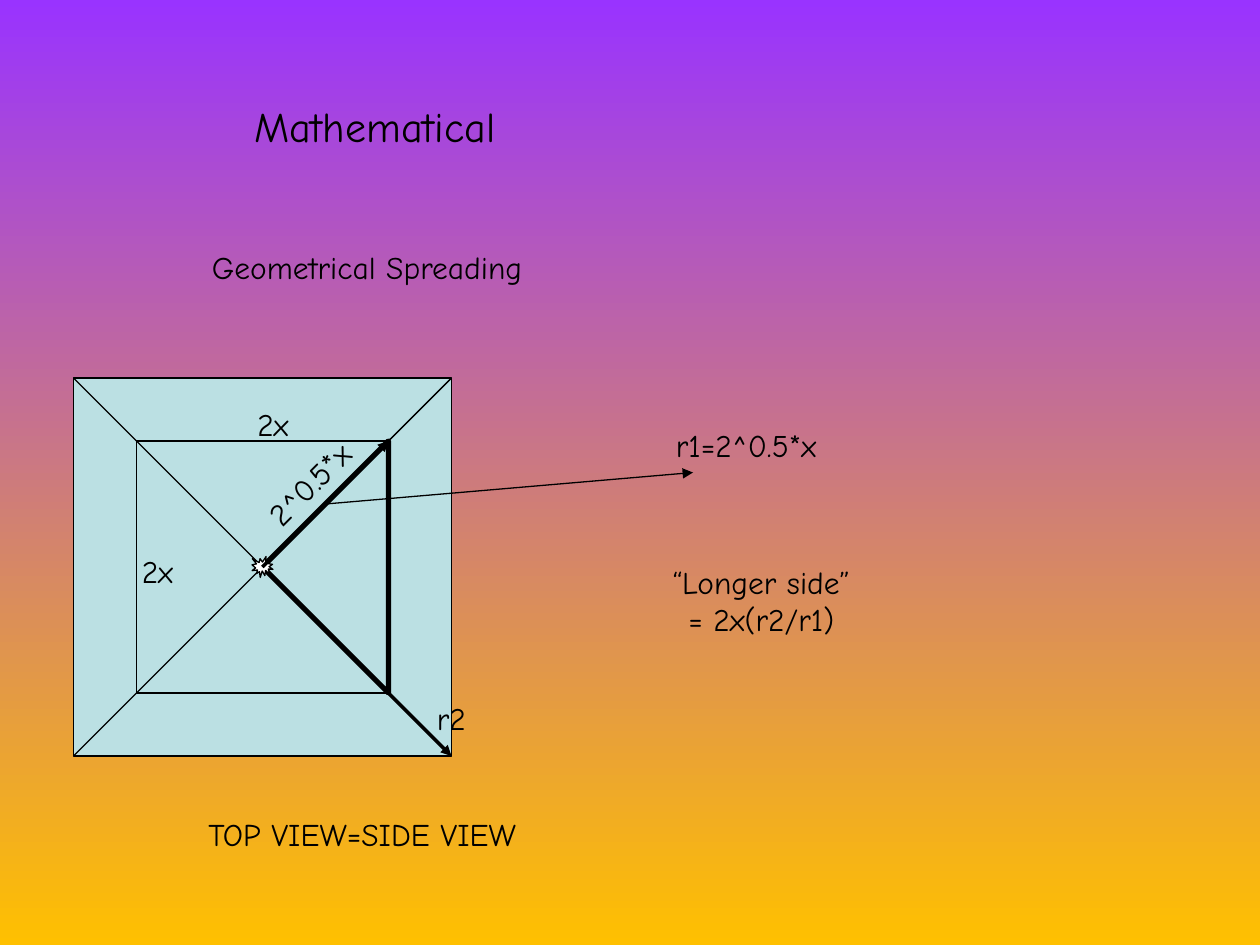
from pptx import Presentation
from pptx.dml.color import RGBColor
from pptx.enum.shapes import MSO_CONNECTOR, MSO_SHAPE
from pptx.enum.text import MSO_ANCHOR, PP_ALIGN
from pptx.oxml.ns import qn
from pptx.util import Pt
from lxml.etree import SubElement

FONT = "Comic Neue"
BLACK = "000000"
PALE_BLUE = "BBE0E3"

# Both squares share the source point as their centre
CENTRE_X, CENTRE_Y = 150, 324
INNER, OUTER = 72, 108


def color(hex_text):
    return RGBColor.from_string(hex_text)


def corner(half, side_x, side_y):
    """Corner of a square; the sides are -1 or 1."""
    return CENTRE_X + side_x * half, CENTRE_Y + side_y * half


def set_background(page, top, bottom):
    fill = page.background.fill
    fill.gradient()
    fill.gradient_angle = 270
    for stop, hex_text in zip(fill.gradient_stops, (top, bottom)):
        stop.color.rgb = color(hex_text)


def set_outline(shape, width):
    shape.line.color.rgb = color(BLACK)
    shape.line.width = Pt(width)


def format_text(box, text, size, align, wrap):
    frame = box.text_frame
    frame.text = text
    frame.word_wrap = wrap
    frame.vertical_anchor = MSO_ANCHOR.TOP
    paragraph = frame.paragraphs[0]
    paragraph.alignment = align
    font = paragraph.runs[0].font
    font.name = FONT
    font.size = Pt(size)
    font.color.rgb = color(BLACK)


def add_title(page, text, left, top, width, height):
    title = page.shapes.title
    title.left, title.top = Pt(left), Pt(top)
    title.width, title.height = Pt(width), Pt(height)
    format_text(title, text, 24, PP_ALIGN.LEFT, True)


def add_label(page, text, left, top, width, height=28.8,
              align=PP_ALIGN.CENTER, wrap=True, rotation=0):
    box = page.shapes.add_textbox(Pt(left), Pt(top), Pt(width), Pt(height))
    box.rotation = rotation
    format_text(box, text, 18, align, wrap)


def add_centred_shape(page, kind, half, fill):
    left, top = corner(half, -1, -1)
    shape = page.shapes.add_shape(
        kind, Pt(left), Pt(top), Pt(2 * half), Pt(2 * half))
    shape.shadow.inherit = False
    shape.fill.solid()
    shape.fill.fore_color.rgb = color(fill)
    set_outline(shape, 0.75)


def add_line(page, start, end, width=0.75, arrow=False):
    line = page.shapes.add_connector(
        MSO_CONNECTOR.STRAIGHT, *(Pt(value) for value in start + end))
    set_outline(line, width)
    properties = line._element.spPr
    if arrow:
        SubElement(properties.find(qn("a:ln")), qn("a:tailEnd"), type="triangle")
    SubElement(properties, qn("a:effectLst"))


def add_outline(page, points, width, close):
    corners = [(Pt(x), Pt(y)) for x, y in points]
    builder = page.shapes.build_freeform(*corners[0])
    builder.add_line_segments(corners[1:], close=close)
    shape = builder.convert_to_shape()
    shape.shadow.inherit = False
    shape.fill.background()
    set_outline(shape, width)


def main():
    deck = Presentation()
    deck.slide_width, deck.slide_height = Pt(720), Pt(540)
    page = deck.slides.add_slide(deck.slide_layouts[5])
    set_background(page, "9933FF", "FFC000")

    # Headings
    add_title(page, "Mathematical", 138, 54, 390, 36)
    add_label(page, "Geometrical Spreading", 114, 138, 396, align=PP_ALIGN.LEFT)

    # Nested squares with their diagonals
    centre = (CENTRE_X, CENTRE_Y)
    for half in (OUTER, INNER):
        add_centred_shape(page, MSO_SHAPE.RECTANGLE, half, PALE_BLUE)
    add_line(page, corner(OUTER, 1, -1), corner(OUTER, -1, 1))
    add_line(page, corner(OUTER, -1, -1), corner(OUTER, 1, 1))

    # Similar triangles spreading from the source
    for half, width, close in ((INNER, 3, True), (OUTER, 0.75, False)):
        points = [corner(half, 1, -1), centre, corner(half, 1, 1)]
        add_outline(page, points, width, close)

    # Side and radius labels
    add_label(page, "2x", 120, 228, 72)
    add_label(page, "2x", 54, 312, 72)
    add_label(page, "2^0.5*x", 135.4, 262, 82.8, wrap=False, rotation=314.8)
    add_line(page, centre, corner(OUTER, 1, 1), 2, arrow=True)
    add_label(page, "r2", 204, 396, 108)

    # Callout for the inner radius
    add_line(page, corner(INNER / 2, 1, -1), (396, 270), arrow=True)
    add_label(page, "r1=2^0.5*x", 372, 240, 108.7, wrap=False)

    # Source point and inner radius arrow
    add_centred_shape(page, MSO_SHAPE.EXPLOSION1, 6, "FFFFFF")
    add_label(page, "TOP VIEW=SIDE VIEW", 102, 462, 210, 50.4)
    add_line(page, centre, corner(INNER, 1, -1), 2, arrow=True)

    # Result
    add_label(page, "“Longer side” = 2x(r2/r1)", 372, 318, 126, 50.4)

    deck.save("out.pptx")


if __name__ == "__main__":
    main()
